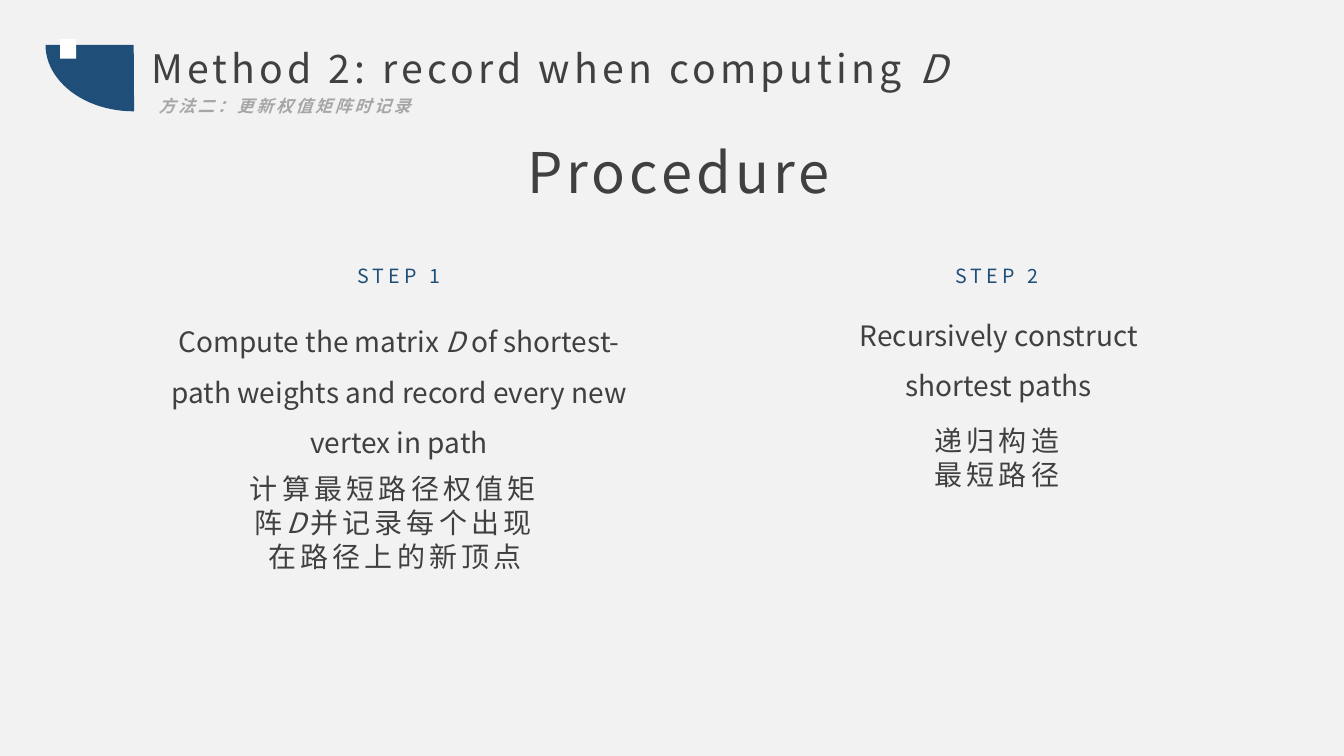
from lxml.etree import SubElement
from pptx import Presentation
from pptx.dml.color import RGBColor
from pptx.enum.shapes import MSO_SHAPE
from pptx.enum.text import MSO_AUTO_SIZE, PP_ALIGN
from pptx.oxml.ns import qn
from pptx.util import Pt

NAVY, INK, GREY, WHITE, PAPER = "1F4E79", "404040", "A6A6A6", "FFFFFF", "F2F2F2"


def color(hex_string):
    return RGBColor.from_string(hex_string)


class SlideBuilder:
    font = "Noto Sans CJK SC"

    def __init__(self, slide):
        self.slide = slide
        fill = slide.background.fill
        fill.solid()
        fill.fore_color.rgb = color(PAPER)

    def shape(self, kind, left, top, width, height, fill):
        shape = self.slide.shapes.add_shape(kind, Pt(left), Pt(top), Pt(width), Pt(height))
        shape.shadow.inherit = False
        shape.fill.solid()
        shape.fill.fore_color.rgb = color(fill)
        shape.line.fill.background()
        return shape

    def text(self, left, top, width, height, content, size, ink=INK, align=PP_ALIGN.CENTER,
             tracking=0, leading=None, bold=False, italic=False):
        """Add a text box; newlines split paragraphs and *stars* mark italics."""
        box = self.slide.shapes.add_textbox(Pt(left), Pt(top), Pt(width), Pt(height))
        frame = box.text_frame
        frame.word_wrap = True
        frame.auto_size = MSO_AUTO_SIZE.SHAPE_TO_FIT_TEXT
        frame.text = content
        for paragraph in frame.paragraphs:
            pieces = paragraph.text.split("*")
            paragraph.text = pieces[0]
            for piece in pieces[1:]:
                paragraph.add_run().text = piece
            paragraph.alignment = align
            if leading:
                paragraph.line_spacing = leading
            for index, run in enumerate(paragraph.runs):
                self.style(run, size, ink, tracking, bold, italic or index % 2 == 1)

    def style(self, run, size, ink, tracking, bold, italic):
        run.font.name = self.font
        run.font.size = Pt(size)
        run.font.color.rgb = color(ink)
        run.font.bold = bold
        run.font.italic = italic
        properties = run.font._element
        properties.set("spc", str(tracking * 100))
        SubElement(properties, qn("a:ea")).set("typeface", self.font)

    def header(self, title, subtitle):
        quarter = self.shape(MSO_SHAPE.PIE, 48, -31, 95, 126, NAVY)
        quarter.adjustments[0] = 107.8
        quarter.adjustments[1] = 162
        quarter.rotation = 270
        self.shape(MSO_SHAPE.RECTANGLE, 43, 28, 11.5, 14, WHITE)
        self.text(101, 28, 716, 41, title, 28, align=PP_ALIGN.LEFT, tracking=3)
        self.text(101.5, 57.5, 230, 27, subtitle, 12, GREY, PP_ALIGN.LEFT,
                  tracking=2, leading=1.5, bold=True, italic=True)

    def step(self, label, label_box, english, english_box, chinese, chinese_box):
        self.text(*label_box, label, 14, NAVY, tracking=3)
        self.text(*english_box, english, 20, leading=1.5)
        self.text(*chinese_box, chinese, 20, tracking=3)


def main():
    presentation = Presentation()
    presentation.slide_width, presentation.slide_height = Pt(960), Pt(540)
    builder = SlideBuilder(presentation.slides.add_slide(presentation.slide_layouts[6]))

    builder.header("Method 2: record when computing *D*", " 方法二：更新权值矩阵时记录")
    builder.text(369.5, 95, 532, 55.5, "Procedure", 40, align=PP_ALIGN.LEFT, tracking=3)
    builder.step(
        "STEP 1", (232.5, 185, 105, 37),
        "Compute the matrix *D* of shortest-path weights and record every new vertex in path",
        (111.5, 216.5, 347, 117),
        "计算最短路径权值矩阵*D*并记录每个出现在路径上的新顶点", (163.5, 333.5, 237.5, 80))
    builder.step(
        "STEP 2", (645, 185, 134, 24.5),
        "Recursively construct shortest paths", (579.5, 212, 268, 75.5),
        "递归构造\n最短路径", (635, 299, 154, 55.5))

    presentation.save("out.pptx")


if __name__ == "__main__":
    main()
